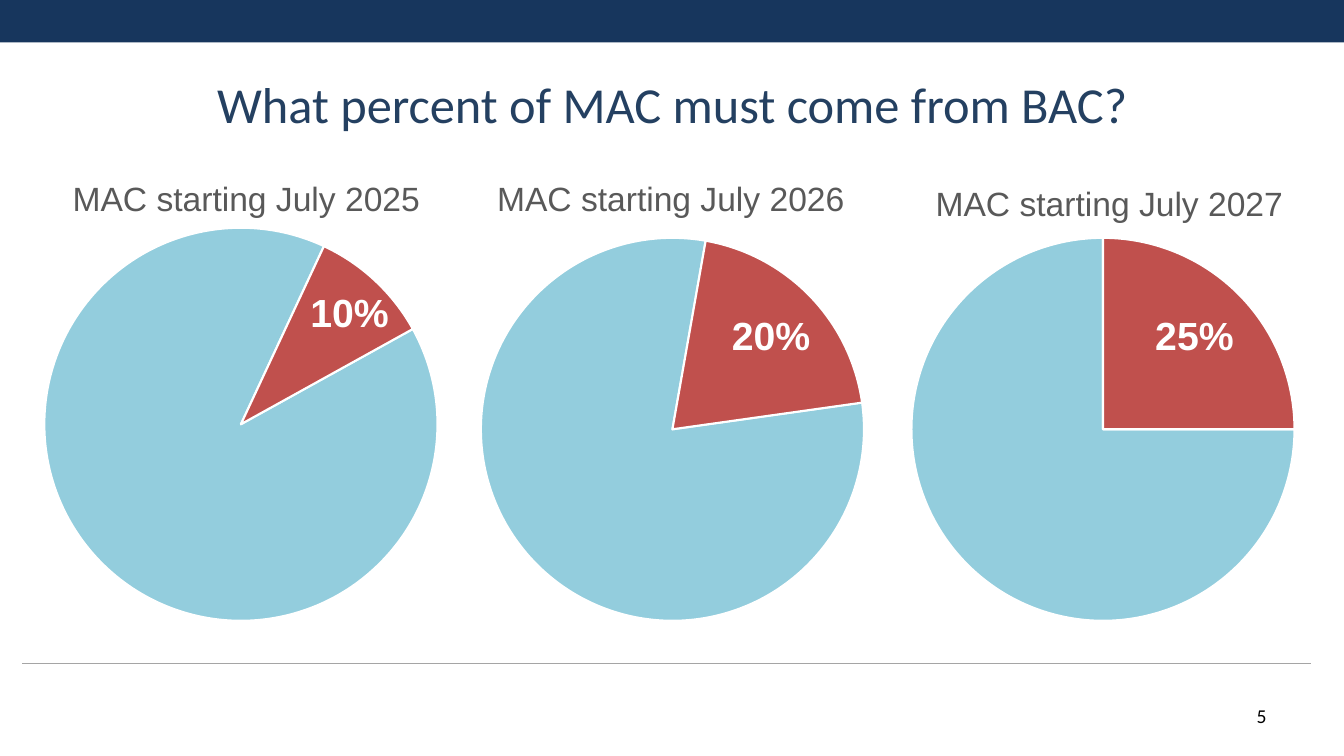
"""Build the slide on the share of MAC that must come from BAC."""
from lxml.etree import SubElement
from pptx import Presentation
from pptx.chart.data import CategoryChartData
from pptx.dml.color import RGBColor
from pptx.enum.chart import XL_CHART_TYPE
from pptx.enum.shapes import MSO_CONNECTOR, MSO_SHAPE
from pptx.enum.text import MSO_ANCHOR, PP_ALIGN
from pptx.oxml import parse_xml
from pptx.oxml.ns import nsdecls, qn
from pptx.util import Inches, Pt

NAVY = RGBColor(0x17, 0x36, 0x5D)
TITLE_BLUE = RGBColor(0x24, 0x40, 0x61)
RULE_GRAY = RGBColor(0xA5, 0xA5, 0xA5)
HEADING_GRAY = RGBColor(0x59, 0x59, 0x59)
LIGHT_BLUE = RGBColor(0x93, 0xCD, 0xDD)
RED = RGBColor(0xC0, 0x50, 0x4D)
WHITE = RGBColor(0xFF, 0xFF, 0xFF)
BLACK = RGBColor(0, 0, 0)

CHART_TOP, CHART_WIDTH, CHART_HEIGHT = 1.5, 4.78, 4.82
PIE_BOTTOM = 6.16


def place(element, index, chart_left, left, top, size=None):
    """Pin a chart part at slide coordinates in inches."""
    for automatic in element.findall(qn("c:layout")):
        element.remove(automatic)
    values = {"xMode": "edge", "yMode": "edge",
              "x": (left - chart_left) / CHART_WIDTH,
              "y": (top - CHART_TOP) / CHART_HEIGHT}
    if size:
        values = {"layoutTarget": "inner", **values,
                  "w": size / CHART_WIDTH, "h": size / CHART_HEIGHT}
    layout = parse_xml(f"<c:layout {nsdecls('c')}><c:manualLayout/></c:layout>")
    for tag, value in values.items():
        SubElement(layout[0], qn(f"c:{tag}")).set("val", str(value))
    element.insert(index, layout)


def style(paragraph, name, size, color, bold=False):
    """Set the font of a whole paragraph."""
    paragraph.font.name = name
    paragraph.font.size = Pt(size)
    paragraph.font.bold = bold
    paragraph.font.color.rgb = color


prs = Presentation()
prs.slide_width = Inches(13.33)
prs.slide_height = Inches(7.5)
slide = prs.slides.add_slide(prs.slide_layouts[5])

band = slide.shapes.add_shape(MSO_SHAPE.RECTANGLE, 0, 0, prs.slide_width, Inches(0.42))
band.shadow.inherit = False
band.fill.solid()
band.fill.fore_color.rgb = NAVY
band.line.fill.background()

footer_rule = slide.shapes.add_connector(
    MSO_CONNECTOR.STRAIGHT, Inches(0.22), Inches(6.58), Inches(13), Inches(6.58))
footer_rule.line.color.rgb = RULE_GRAY
footer_rule.line.width = Pt(0.75)
SubElement(footer_rule._element.spPr, qn("a:effectLst"))

title = slide.shapes.title
title.left, title.top = Inches(0.67), Inches(0.5)
title.width, title.height = Inches(12), Inches(1.05)
title.text_frame.text = "What percent of MAC must come from BAC?"
title.text_frame.vertical_anchor = MSO_ANCHOR.MIDDLE
title.text_frame.paragraphs[0].alignment = PP_ALIGN.CENTER
style(title.text_frame.paragraphs[0], "Calibri", 36, TITLE_BLUE)

page_number = slide.shapes.add_textbox(Inches(11.36), Inches(6.9), Inches(1.3), Inches(0.4))
page_number.text_frame.word_wrap = True
page_number.text_frame.vertical_anchor = MSO_ANCHOR.MIDDLE
page_number.text_frame.text = "5"
page_number.text_frame.paragraphs[0].alignment = PP_ALIGN.RIGHT
style(page_number.text_frame.paragraphs[0], "Calibri", 14, BLACK)

# year, BAC share, first slice angle, chart left, heading left and top,
# pie left and diameter, share label left and top
pies = [
    (2025, 10, 61, 0, 0.66, 1.7, 0.44, 3.9, 2.98, 2.81),
    (2026, 20, 82, 4.28, 4.87, 1.7, 4.77, 3.8, 7.16, 3.04),
    (2027, 25, 90, 8.56, 9.22, 1.75, 9.04, 3.8, 11.36, 3.04),
]
for (year, share, angle, chart_left, heading_left, heading_top,
     pie_left, diameter, label_left, label_top) in pies:
    shares = CategoryChartData()
    shares.categories = ["1", "2"]
    shares.add_series("Series 1", (100 - share, share))
    chart = slide.shapes.add_chart(
        XL_CHART_TYPE.PIE, Inches(chart_left), Inches(CHART_TOP),
        Inches(CHART_WIDTH), Inches(CHART_HEIGHT), shares).chart
    chart.has_legend = False
    chart.font.name = "Arial"
    chart.font.size = Pt(10)
    chart.font.color.rgb = BLACK

    heading = chart.chart_title
    heading.text_frame.text = f"MAC starting July {year}"
    style(heading.text_frame.paragraphs[0], "Arial", 24, HEADING_GRAY)
    place(heading._element, 1, chart_left, heading_left, heading_top)

    pie = chart.plots[0]
    for index, color in enumerate((LIGHT_BLUE, RED)):
        point = pie.series[0].points[index]
        point.format.fill.solid()
        point.format.fill.fore_color.rgb = color
        point.format.line.color.rgb = WHITE
        point.format.line.width = Pt(1.5)
    for default_angle in pie._element.findall(qn("c:firstSliceAng")):
        pie._element.remove(default_angle)
    SubElement(pie._element, qn("c:firstSliceAng")).set("val", str(angle))
    plot_area = pie._element.getparent()
    place(plot_area, 0, chart_left, pie_left, PIE_BOTTOM - diameter, diameter)
    plot_area.getparent().addnext(parse_xml(
        f"<c:spPr {nsdecls('c', 'a')}><a:noFill/><a:ln><a:noFill/></a:ln></c:spPr>"))

    share_label = slide.shapes.add_textbox(
        Inches(label_left), Inches(label_top), Inches(1.1), Inches(0.57))
    share_label.text_frame.word_wrap = True
    share_label.text_frame.text = f"{share}%"
    style(share_label.text_frame.paragraphs[0], "Arial", 28, WHITE, bold=True)

prs.save("out.pptx")
